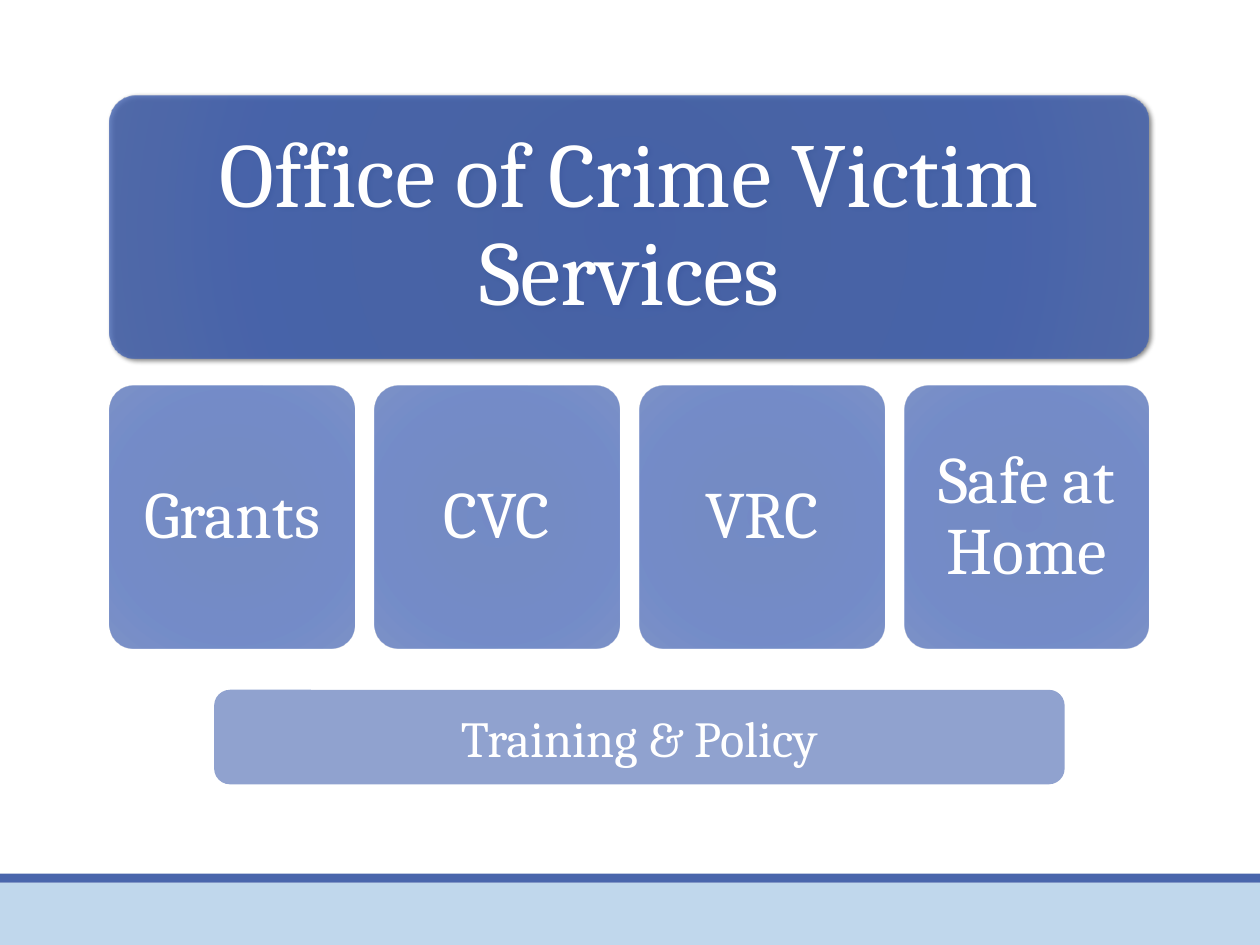
from pptx import Presentation
from pptx.dml.color import RGBColor as RGB
from pptx.enum.shapes import MSO_SHAPE as SHAPE
from pptx.enum.text import MSO_ANCHOR as ANCHOR, PP_ALIGN as ALIGN
from pptx.oxml import parse_xml
from pptx.oxml.ns import nsdecls, qn
from pptx.util import Inches, Pt

COLORS = {
    "white": "FFFFFF",
    "band": "C0D7EC",
    "rule": "4A66AC",
    "policy": "90A2CF",
    "shadow": "000000",
}
GLOW = [(0, "3759AE"), (34, "3A5BAD"), (70, "395BB2"), (100, "4564B1")]
WIDTH, HEIGHT = 11.11, 8.33


def write(tf, text, size=32, font="Cambria", color="white", inset=0.1):
    tf.word_wrap = True
    tf.vertical_anchor = ANCHOR.MIDDLE
    tf.margin_left = tf.margin_right = Inches(inset)
    tf.margin_top = tf.margin_bottom = Inches(inset)
    p = tf.paragraphs[0]
    p.alignment = ALIGN.CENTER
    r = p.add_run()
    r.text = text
    r.font.size, r.font.name = Pt(size), font
    r.font.color.rgb = RGB.from_string(COLORS[color])
    return p


class Chart:
    """Organisation chart on a grid of four columns and two rows."""
    left, top = 0.97, 0.84
    col, row = 2.155, 2.32
    col_gap, row_gap = 0.18, 0.24

    def __init__(self, prs):
        self.slide = prs.slides.add_slide(prs.slide_layouts[6])

    def shape(self, kind, x, y, w, h):
        s = self.slide.shapes.add_shape(kind, *map(Inches, (x, y, w, h)))
        s.line.fill.background()
        s.shadow.inherit = False
        return s

    def plain(self, color, x, y, w, h, kind=SHAPE.RECTANGLE):
        """Flat shape; place and size are shares of the slide."""
        s = self.shape(kind, x * WIDTH, y * HEIGHT, w * WIDTH, h * HEIGHT)
        s.fill.solid()
        s.fill.fore_color.rgb = RGB.from_string(COLORS[color])
        return s

    def card(self, text, col, row, span=1, size=42, inset=0.17, alpha=70):
        """Translucent rounded card; place is a grid cell."""
        s = self.shape(SHAPE.ROUNDED_RECTANGLE,
                       self.left + col * (self.col + self.col_gap),
                       self.top + row * (self.row + self.row_gap),
                       span * self.col + (span - 1) * self.col_gap, self.row)
        s.adjustments[0] = 0.1
        self.glow(s, alpha)
        write(s.text_frame, text, size, inset=inset).line_spacing = 0.9
        return s

    def glow(self, s, alpha):
        stops = "".join(
            f'<a:gs pos="{pos * 1000}"><a:srgbClr val="{color}">'
            f'<a:alpha val="{alpha * 1000}"/></a:srgbClr></a:gs>'
            for pos, color in GLOW)
        s.fill.background()
        spPr = s.element.spPr
        spPr.replace(spPr.find(qn("a:noFill")), parse_xml(
            f'<a:gradFill {nsdecls("a")} rotWithShape="1"><a:gsLst>{stops}</a:gsLst>'
            '<a:path path="circle"><a:fillToRect l="100000" t="100000" '
            'r="100000" b="100000"/></a:path></a:gradFill>'))

    def drop_shadow(self, s, alpha=60, blur=3, dist=2, angle=45):
        s.element.spPr.find(qn("a:effectLst")).append(parse_xml(
            f'<a:outerShdw {nsdecls("a")} blurRad="{Pt(blur)}" dist="{Pt(dist)}" '
            f'dir="{angle * 60000}" rotWithShape="0">'
            f'<a:srgbClr val="{COLORS["shadow"]}">'
            f'<a:alpha val="{alpha * 1000}"/></a:srgbClr></a:outerShdw>'))


def main():
    prs = Presentation()
    prs.slide_width, prs.slide_height = Inches(WIDTH), Inches(HEIGHT)
    chart = Chart(prs)

    # Footer band and rule
    chart.plain("band", 0, 7.78 / HEIGHT, 1, 0.55 / HEIGHT)
    chart.plain("rule", 0, 7.7 / HEIGHT, 1, 0.08 / HEIGHT)

    # Office heading over its four programs
    office = chart.card("Office of Crime Victim Services", 0, 0, span=4,
                        size=58, inset=0.24, alpha=80)
    chart.drop_shadow(office)
    for col, program in enumerate(("Grants", "CVC", "VRC", "Safe at Home")):
        chart.card(program, col, 1)

    # Shared training and policy bar
    policy = chart.plain("policy", 0.17, 0.73, 0.675, 0.1,
                         SHAPE.ROUNDED_RECTANGLE)
    write(policy.text_frame, "Training & Policy", inset=0.05)

    prs.save("out.pptx")


if __name__ == "__main__":
    main()
